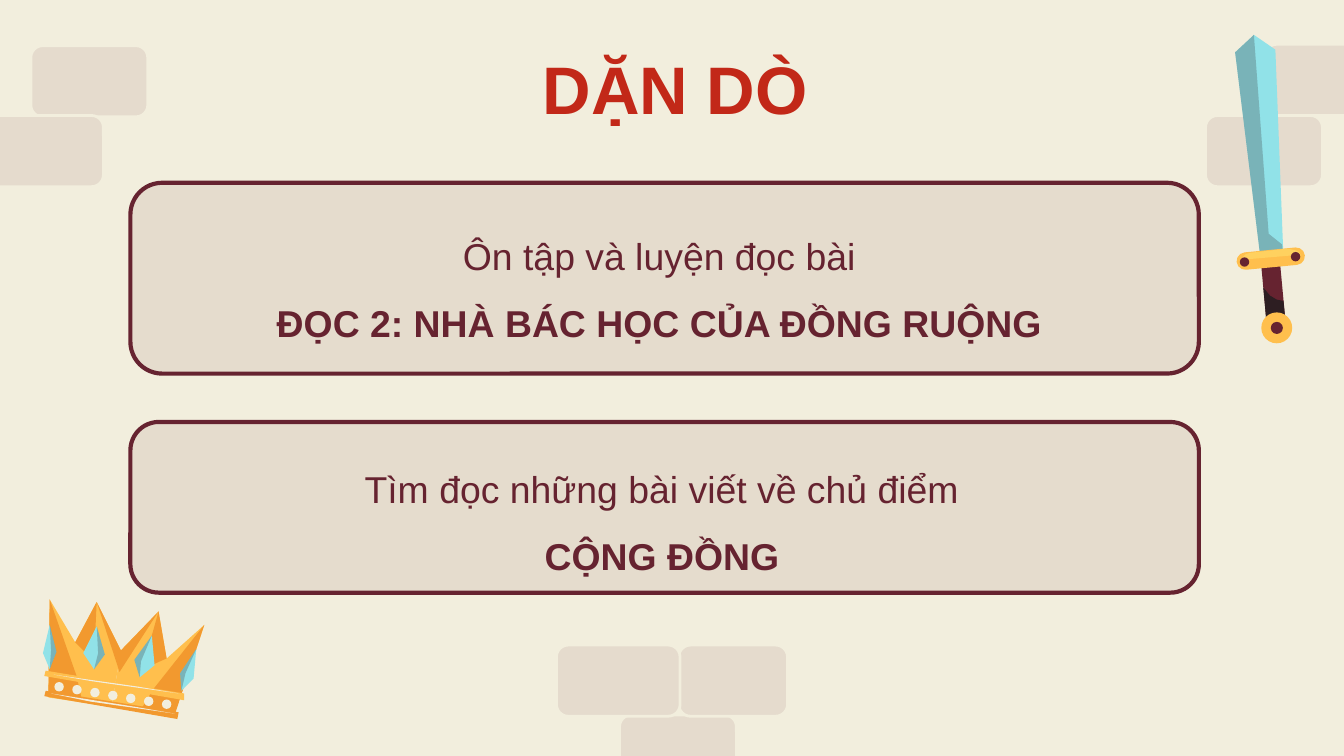
from typing import Any, NamedTuple

import pptx
import pptx.dml.color
import pptx.enum.shapes
import pptx.enum.text
import pptx.util
from lxml import etree

Inches = pptx.util.Inches
Pt = pptx.util.Pt
RGBColor = pptx.dml.color.RGBColor
Shape = pptx.enum.shapes.MSO_SHAPE
Align = pptx.enum.text.PP_ALIGN

CREAM = RGBColor(0xF2, 0xEE, 0xDD)
SAND = RGBColor(0xE5, 0xDC, 0xCD)
MAROON = RGBColor(0x66, 0x23, 0x30)
RED = RGBColor(0xC2, 0x28, 0x18)
GOLD = RGBColor(0xFF, 0xBF, 0x4D)
LIGHT_GOLD = RGBColor(0xFF, 0xD1, 0x5F)
ORANGE = RGBColor(0xF2, 0x99, 0x2F)
AQUA = RGBColor(0x91, 0xE2, 0xE8)
DARK = RGBColor(0x2D, 0x1E, 0x22)
DRAWING = "http://schemas.openxmlformats.org/drawingml/2006/main"
PAGE_WIDTH = 10
PAGE_HEIGHT = PAGE_WIDTH * 9 / 16


class Frame(NamedTuple):
    left: float
    top: float
    width: float
    height: float


class Facet(NamedTuple):
    color: RGBColor
    points: list[tuple[float, float]]
    opacity: int = 100


class Line(NamedTuple):
    text: str
    bold: bool = False


BRICK_GROUPS = [
    [Frame(8.97, 0.86, 0.87, 0.53), Frame(9.41, 0.33, 0.72, 0.53)],
    [Frame(0.23, 0.34, 0.87, 0.53), Frame(-0.1, 0.86, 0.87, 0.53)],
    [Frame(4.61, 5.32, 0.87, 0.53), Frame(5.05, 4.8, 0.81, 0.53), Frame(4.14, 4.8, 0.92, 0.53)],
]

CROWN = [
    Facet(GOLD, [(0.72, 4.48), (0.9, 4.84), (0.83, 5.26), (0.36, 5.19), (0.37, 4.46), (0.56, 4.78)]),
    Facet(ORANGE, [(0.72, 4.48), (0.7, 4.92), (0.56, 4.78)]),
    Facet(ORANGE, [(0.37, 4.46), (0.57, 5.03), (0.61, 5.21), (0.36, 5.17)]),
    Facet(AQUA, [(0.37, 4.65), (0.42, 4.85), (0.37, 4.98), (0.32, 4.86)]),
    Facet(DARK, [(0.37, 4.65), (0.42, 4.85), (0.37, 4.98), (0.38, 4.84)], 24),
    Facet(AQUA, [(0.37, 4.71), (0.36, 4.91), (0.33, 4.85)]),
    Facet(AQUA, [(0.72, 4.66), (0.78, 4.87), (0.7, 4.98), (0.62, 4.86)]),
    Facet(DARK, [(0.72, 4.66), (0.78, 4.87), (0.7, 4.98), (0.73, 4.86)], 24),
    Facet(AQUA, [(0.71, 4.71), (0.69, 4.93), (0.64, 4.85)]),
    Facet(GOLD, [(1.18, 4.55), (1.24, 4.9), (1.52, 4.65), (1.29, 5.34), (0.83, 5.26), (0.9, 4.84)]),
    Facet(ORANGE, [(1.18, 4.55), (1.24, 4.9), (1.06, 4.98)]),
    Facet(ORANGE, [(1.52, 4.65), (1.3, 5.32), (1.05, 5.28), (1.14, 5.13)]),
    Facet(AQUA, [(1.46, 4.83), (1.44, 5.05), (1.35, 5.14), (1.34, 5.01)]),
    Facet(DARK, [(1.46, 4.83), (1.38, 5.01), (1.35, 5.14), (1.34, 5.01)], 24),
    Facet(AQUA, [(1.44, 4.89), (1.43, 5.04), (1.39, 5.08)]),
    Facet(AQUA, [(1.13, 4.73), (1.15, 4.95), (1.04, 5.04), (1, 4.91)]),
    Facet(DARK, [(1.13, 4.73), (1.05, 4.92), (1.04, 5.04), (1, 4.91)], 24),
    Facet(AQUA, [(1.12, 4.78), (1.14, 4.93), (1.07, 4.99)]),
    Facet(GOLD, [(0.34, 4.99), (1.37, 5.16), (1.37, 5.21), (0.33, 5.03)]),
    Facet(ORANGE, [(0.34, 5.14), (1.33, 5.3), (1.32, 5.35), (0.33, 5.18)]),
    Facet(ORANGE, [(1.18, 4.55), (0.89, 5), (0.72, 4.48), (0.9, 4.84)]),
    Facet(CREAM, [(0.4, 5.02), (1.03, 5.11), (1.33, 5.16), (0.69, 5.07)]),
    Facet(CREAM, [(0.38, 5.16), (1.01, 5.26), (1.3, 5.31), (0.67, 5.22)]),
]

BLADE = [
    Facet(MAROON, [(9.57, 2.45), (9.43, 2.47), (9.38, 1.93), (9.52, 1.91)]),
    Facet(AQUA, [(9.55, 1.92), (9.38, 1.93), (9.19, 0.39), (9.33, 0.26), (9.49, 0.37)]),
    Facet(DARK, [(9.38, 1.93), (9.19, 0.39), (9.33, 0.26), (9.44, 1.74), (9.54, 1.82), (9.55, 1.91)], 24),
]
HILT = [
    Facet(LIGHT_GOLD, [(9.68, 1.9), (9.62, 1.9), (9.27, 1.93), (9.23, 1.94), (9.24, 1.92),
                       (9.27, 1.89), (9.31, 1.88), (9.58, 1.85), (9.63, 1.86), (9.66, 1.87)]),
    Facet(DARK, [(9.57, 2.45), (9.43, 2.47), (9.4, 2.14), (9.45, 2.2), (9.5, 2.23), (9.55, 2.24)]),
]


def paint(shape: Any, color: RGBColor, opacity: int = 100,
          outline: RGBColor | None = None, weight: float = 1) -> None:
    shape.shadow.inherit = False
    shape.fill.solid()
    shape.fill.fore_color.rgb = color
    if opacity < 100:
        swatch = shape.fill._xPr.find(f"{{{DRAWING}}}solidFill")[0]
        etree.SubElement(swatch, f"{{{DRAWING}}}alpha", val=str(opacity * 1000))
    if outline is None:
        shape.line.fill.background()
    else:
        shape.line.color.rgb = outline
        shape.line.width = Pt(weight)


def place(shapes: Any, kind: Any, frame: Frame, color: RGBColor, **style: Any) -> Any:
    shape = shapes.add_shape(kind, *map(Inches, frame))
    paint(shape, color, **style)
    return shape


def draw_facets(shapes: Any, facets: list[Facet]) -> None:
    for facet in facets:
        corners = [(Inches(x), Inches(y)) for x, y in facet.points]
        builder = shapes.build_freeform(*corners[0])
        builder.add_line_segments(corners[1:], close=True)
        paint(builder.convert_to_shape(), facet.color, facet.opacity)


def draw_disc(shapes: Any, x: float, y: float, size: float, color: RGBColor) -> None:
    place(shapes, Shape.OVAL, Frame(x - size / 2, y - size / 2, size, size), color)


def draw_bricks(shapes: Any) -> None:
    for bricks in BRICK_GROUPS:
        group = shapes.add_group_shape().shapes
        for brick in bricks:
            place(group, Shape.ROUNDED_RECTANGLE, brick, MAROON,
                  opacity=9, outline=CREAM, weight=1.5)


def draw_crown(shapes: Any) -> None:
    group = shapes.add_group_shape().shapes
    draw_facets(group, CROWN)
    for index in range(7):
        draw_disc(group, 0.44 + 0.8 * index / 6, 5.11 + 0.13 * index / 6, 0.07, CREAM)


def draw_sword(shapes: Any) -> None:
    group = shapes.add_group_shape().shapes
    draw_facets(group, BLADE)
    guard = place(group, Shape.ROUNDED_RECTANGLE, Frame(9.2, 1.86, 0.51, 0.13), GOLD)
    guard.adjustments[0] = 0.5
    guard.rotation = -5.5
    draw_facets(group, HILT)
    draw_disc(group, 9.64, 1.91, 0.07, MAROON)
    draw_disc(group, 9.26, 1.95, 0.07, MAROON)
    draw_disc(group, 9.5, 2.44, 0.23, GOLD)
    draw_disc(group, 9.5, 2.44, 0.09, MAROON)


def write(box: Any, lines: list[Line], *, size: float = 20, color: RGBColor = MAROON,
          align: Any = Align.CENTER, wrap: bool = True) -> None:
    frame = box.text_frame
    frame.word_wrap = wrap
    frame.auto_size = pptx.enum.text.MSO_AUTO_SIZE.SHAPE_TO_FIT_TEXT
    frame.vertical_anchor = pptx.enum.text.MSO_ANCHOR.TOP
    for index, line in enumerate(lines):
        para = frame.add_paragraph() if index else frame.paragraphs[0]
        para.alignment = align
        para.line_spacing = 1.5
        span = para.add_run()
        span.text = line.text
        span.font.name = "Arial"
        span.font.size = Pt(size)
        span.font.bold = line.bold
        span.font.color.rgb = color


def draw_card(shapes: Any, frame: Frame) -> None:
    place(shapes, Shape.ROUNDED_RECTANGLE, frame, SAND, outline=MAROON, weight=2.25)


def main() -> None:
    deck = pptx.Presentation()
    deck.slide_width, deck.slide_height = Inches(PAGE_WIDTH), Inches(PAGE_HEIGHT)
    page = deck.slides.add_slide(deck.slide_layouts[6])
    page.background.fill.solid()
    page.background.fill.fore_color.rgb = CREAM
    shapes = page.shapes

    draw_bricks(shapes)
    draw_crown(shapes)
    draw_sword(shapes)

    draw_card(shapes, Frame(0.97, 3.14, 7.95, 1.27))
    title = shapes.add_textbox(*map(Inches, Frame(3.94, 0, 2.19, 0.9)))
    write(title, [Line("DẶN DÒ", True)], size=36, color=RED, align=Align.JUSTIFY, wrap=False)
    topic = place(shapes, Shape.RECTANGLE, Frame(1.1, 3.25, 7.65, 1.05), SAND)
    write(topic, [Line("Tìm đọc những bài viết về chủ điểm"), Line("CỘNG ĐỒNG", True)])

    draw_card(shapes, Frame(0.97, 1.36, 7.95, 1.42))
    review = shapes.add_textbox(*map(Inches, Frame(0.97, 1.52, 7.95, 1.11)))
    write(review, [Line("Ôn tập và luyện đọc bài "),
                   Line("ĐỌC 2: NHÀ BÁC HỌC CỦA ĐỒNG RUỘNG ", True)])

    deck.save("out.pptx")


if __name__ == "__main__":
    main()
